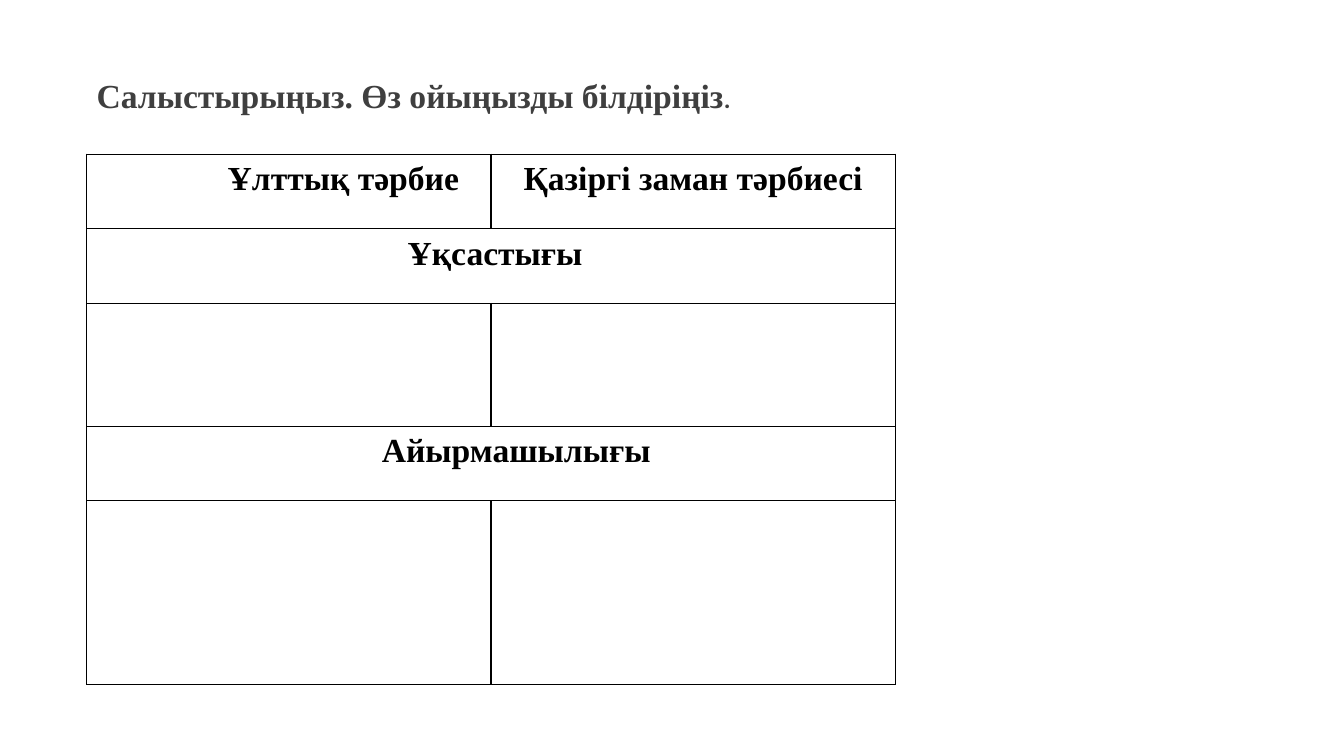
"""Build a slide with a blank table for comparing two kinds of upbringing."""
from lxml import etree
from pptx import Presentation
from pptx import util as u
from pptx.dml.color import RGBColor
from pptx.enum import text
from pptx.oxml.ns import qn

THEME = {
    "ink": "000000", "title": "3F3F3F",
    "head_font": "Times New Roman", "body_font": "Calibri",
    "head_size": 24, "body_size": 18, "border": 1,
}
LEFT = 0.86
COL_W = 4.01
ROWS = [0.74, 0.74, 1.22, 0.74, 1.82]
INSET = 0.07
LABELS = [
    (0, 0, "Ұлттық тәрбие", 1.08),
    (0, 1, "Қазіргі заман тәрбиесі", 0),
    (1, 0, "Ұқсастығы", 0.08),
    (3, 0, "Айырмашылығы", 0.5),
]


def add_run(p, words, font, size, color):
    r = p.add_run()
    r.text = words
    r.font.name = font
    r.font.size = u.Pt(size)
    r.font.bold = True
    r.font.color.rgb = RGBColor.from_string(color)


def add_borders(cell):
    tc_pr = cell._tc.get_or_add_tcPr()
    for side in ("a:lnL", "a:lnR", "a:lnT", "a:lnB"):
        ln = etree.SubElement(tc_pr, qn(side), w=str(u.Pt(THEME["border"])))
        fill = etree.SubElement(ln, qn("a:solidFill"))
        etree.SubElement(fill, qn("a:srgbClr"), val=THEME["ink"])


prs = Presentation()
prs.slide_width, prs.slide_height = u.Inches(13.33), u.Inches(7.5)
s = prs.slides.add_slide(prs.slide_layouts[6])

gf = s.shapes.add_table(len(ROWS), 2, u.Inches(LEFT), u.Inches(1.53),
                        u.Inches(2 * COL_W), u.Inches(sum(ROWS)))
tbl = gf.table
tbl.first_row = tbl.horz_banding = False
for col in tbl.columns:
    col.width = u.Inches(COL_W)
for row, height in zip(tbl.rows, ROWS):
    row.height = u.Inches(height)
for cell in tbl.iter_cells():
    add_borders(cell)
    cell.fill.background()
for i in (1, 3):
    tbl.cell(i, 0).merge(tbl.cell(i, 1))

for i, j, words, indent in LABELS:
    cell = tbl.cell(i, j)
    cell.margin_left = u.Inches(INSET + indent)
    cell.margin_right = u.Inches(INSET)
    cell.margin_top, cell.margin_bottom = u.Inches(0.01), 0
    p = cell.text_frame.paragraphs[0]
    p.alignment = text.PP_ALIGN.CENTER
    p.line_spacing = 1.15
    add_run(p, words, THEME["head_font"], THEME["head_size"], THEME["ink"])

sp = s.shapes.add_textbox(u.Inches(LEFT), u.Inches(0.69), u.Inches(7.21), u.Inches(0.5))
tf = sp.text_frame
tf.word_wrap = True
tf.vertical_anchor = text.MSO_ANCHOR.MIDDLE
p = tf.paragraphs[0]
add_run(p, "Салыстырыңыз. Өз ойыңызды білдіріңіз",
        THEME["head_font"], THEME["head_size"], THEME["title"])
add_run(p, ".", THEME["body_font"], THEME["body_size"], THEME["title"])

prs.save("out.pptx")
